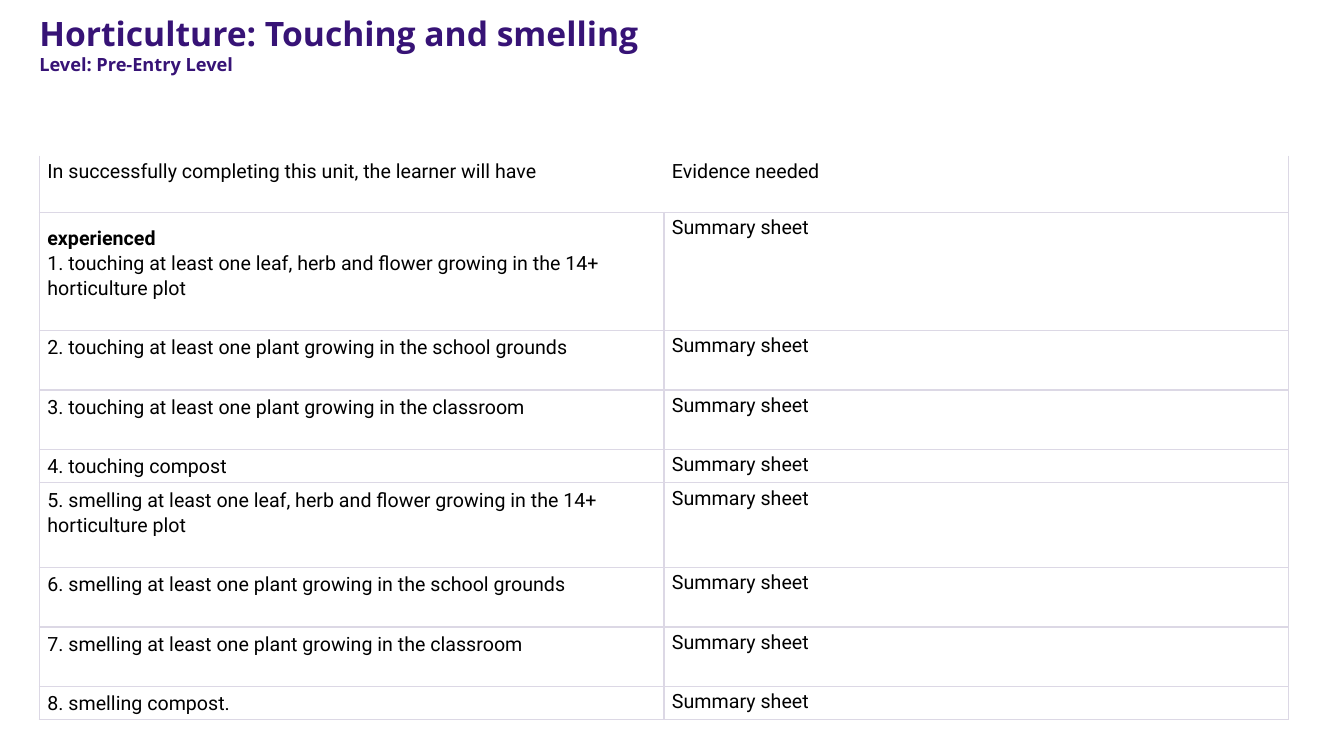
from dataclasses import dataclass

from lxml.etree import SubElement as Sub
from pptx import Presentation
from pptx.dml.color import RGBColor as Color
from pptx.enum.text import MSO_ANCHOR as Anchor
from pptx.oxml.ns import qn
from pptx.util import Inches, Pt


@dataclass(frozen=True)
class Theme:
    head: str = "Open Sans"
    body: str = "Roboto"
    title: int = 24
    level: int = 13
    text: int = 14
    purple: str = "371376"
    ink: str = "000000"
    rule: str = "DCD8E5"
    white: str = "FFFFFF"


THEME = Theme()
HEADS = ("In successfully completing this unit, the learner will have", "Evidence needed")
GOALS = (
    ("touching at least one leaf, herb and flower growing in the 14+ horticulture plot", 1.17),
    ("touching at least one plant growing in the school grounds", 0.59),
    ("touching at least one plant growing in the classroom", 0.59),
    ("touching compost", 0.33),
    ("smelling at least one leaf, herb and flower growing in the 14+ horticulture plot", 0.84),
    ("smelling at least one plant growing in the school grounds", 0.59),
    ("smelling at least one plant growing in the classroom", 0.59),
    ("smelling compost.", 0.33),
)


def write(frame, text, font=THEME.body, size=THEME.text, color=THEME.ink,
          bold=False, pitch=None, more=False):
    para = frame.add_paragraph() if more else frame.paragraphs[0]
    if pitch:
        para.line_spacing = Pt(pitch)
    run = para.add_run()
    run.text = text
    run.font.name = font
    run.font.size = Pt(size)
    run.font.bold = bold
    run.font.color.rgb = Color.from_string(color)


def edge(cell, hidden):
    props = cell._tc.get_or_add_tcPr()
    for side in "LRTB":
        off = side in hidden
        line = Sub(props, qn(f"a:ln{side}"), w=str(Pt(1 if off else 1.2)))
        fill = Sub(line, qn("a:solidFill"))
        Sub(fill, qn("a:srgbClr"), val=THEME.white if off else THEME.rule)


def style(cell, hidden=""):
    edge(cell, hidden)
    cell.fill.background()
    cell.margin_left = cell.margin_right = Inches(0.08)
    cell.margin_top = cell.margin_bottom = Inches(0.04)
    cell.vertical_anchor = Anchor.TOP


def header(slide, left, top, width, height):
    box = slide.shapes.add_textbox(Inches(left), Inches(top), Inches(width), Inches(height))
    frame = box.text_frame
    frame.margin_left = frame.margin_right = frame.margin_top = frame.margin_bottom = 0
    frame.word_wrap = False
    look = {"font": THEME.head, "color": THEME.purple, "bold": True}
    write(frame, "Horticulture: Touching and smelling", size=THEME.title, **look)
    write(frame, "Level: Pre-Entry Level", size=THEME.level, more=True, **look)


def goals(slide, left, top, width, height):
    shape = slide.shapes.add_table(len(GOALS) + 1, 2, Inches(left), Inches(top),
                                   Inches(width), Inches(height))
    table = shape.table
    table.first_row = table.horz_banding = False
    for col in table.columns:
        col.width = Inches(width / 2)
    table.rows[0].height = Inches(height - sum(tall for _, tall in GOALS))
    for col, (text, hidden) in enumerate(zip(HEADS, ("TR", "TL"))):
        cell = table.cell(0, col)
        style(cell, hidden)
        write(cell.text_frame, text)
    for num, (text, tall) in enumerate(GOALS, 1):
        table.rows[num].height = Inches(tall)
        goal, proof = table.cell(num, 0), table.cell(num, 1)
        style(goal, "T" if num == 0 else "")
        style(proof)
        first = num == 1
        if first:
            write(goal.text_frame, "experienced", bold=True, pitch=24)
        write(goal.text_frame, f"{num}. {text}", pitch=18, more=first)
        write(proof.text_frame, "Summary sheet")


def main():
    deck = Presentation()
    deck.slide_width, deck.slide_height = Inches(13.33), Inches(7.5)
    slide = deck.slides.add_slide(deck.slide_layouts[6])
    goals(slide, 0.39, 1.55, 12.39, 5.59)
    header(slide, 0.39, 0.13, 12.39, 0.7)
    deck.save("out.pptx")


if __name__ == "__main__":
    main()
